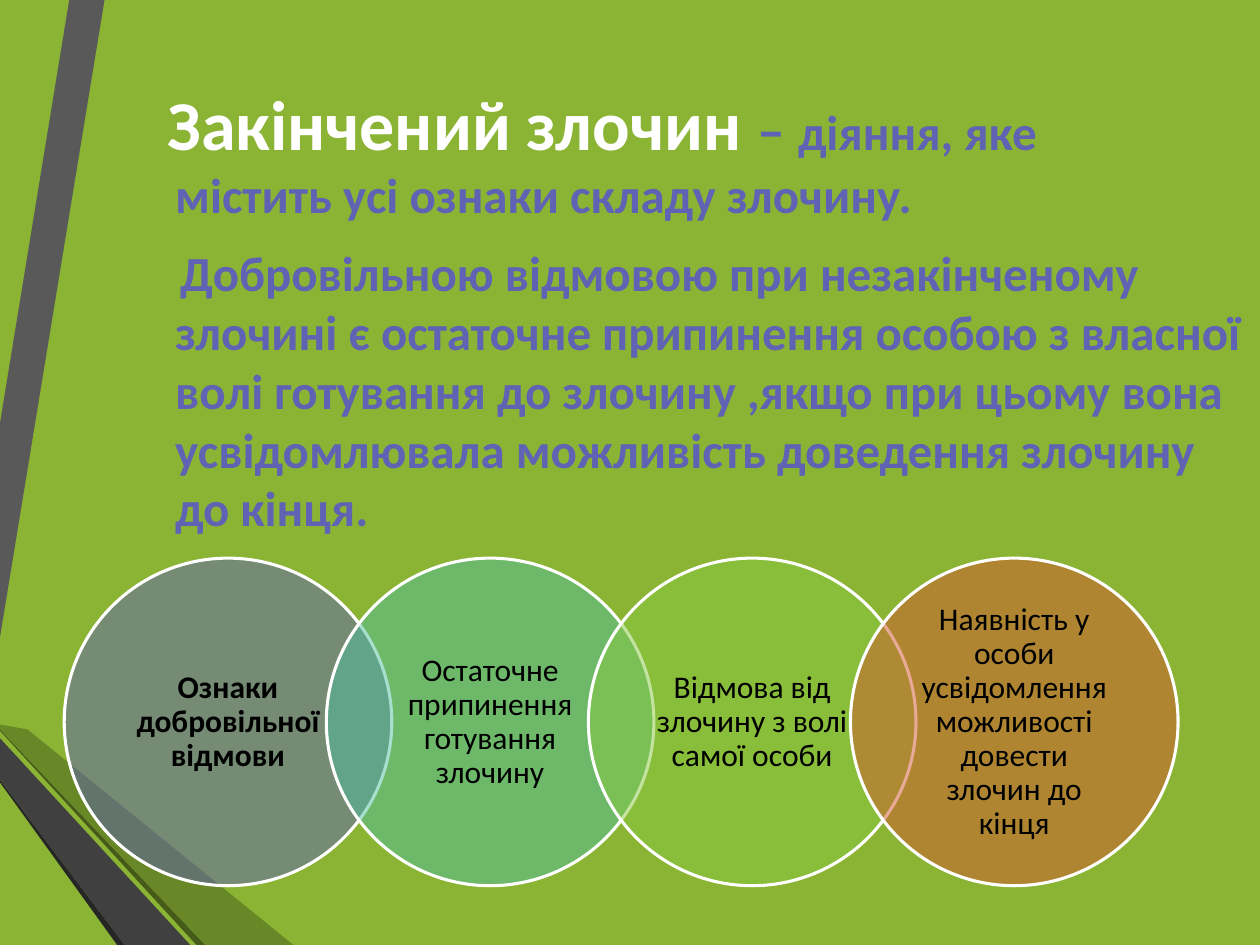
from lxml.etree import SubElement
from pptx import Presentation
from pptx.dml.color import RGBColor
from pptx.enum.shapes import MSO_SHAPE
from pptx.enum.text import MSO_ANCHOR, MSO_AUTO_SIZE, PP_ALIGN
from pptx.oxml.ns import qn
from pptx.util import Inches, Pt

COLORS = {
    "background": "8BB434", "white": "FFFFFF", "black": "000000",
    "violet": "6063B4", "teal": "51BE9F", "green": "88C841", "rust": "D35731",
    "band": "595959", "edge": "262626", "blade": "404040",
    "dark_leaf": "465A1A", "leaf": "688727",
}

DECORATION = [
    ("band", [(0.83, 0), (0.55, 0), (0, 3.36), (0, 5.06)]),
    ("edge", [(0, 6.19), (0, 6.21), (0.93, 7.5), (0.99, 7.5)]),
    ("dark_leaf", [(0, 5.79), (0, 5.8), (1.56, 7.5), (1.63, 7.5)]),
    ("leaf", [(0, 5.79), (1.63, 7.5), (2.33, 7.5), (0.22, 5.79), (0, 5.75)]),
    ("blade", [(0, 6.19), (0.99, 7.5), (1.51, 7.5), (0, 5.86)]),
]

# Each paragraph: first-line indent in inches, then runs of (text, size, colour)
DEFINITIONS = [
    (-0.06, [("Закінчений злочин ", 40, "white"), ("– ", 32, "violet"),
             ("діяння, яке\vмістить усі ознаки складу злочину.", 28, "violet")]),
    (0.04, [("Добровільною відмовою при незакінченому злочині є остаточне "
             "припинення особою з власної волі готування до злочину ,якщо при "
             "цьому вона усвідомлювала можливість доведення злочину до кінця.",
             28, "violet")]),
]

SIGNS = [
    ("Ознаки добровільної відмови", "violet", True),
    ("Остаточне припинення готування злочину", "teal", False),
    ("Відмова від злочину з волі самої особи", "green", False),
    ("Наявність у особи усвідомлення можливості довести злочин до кінця",
     "rust", False),
]
CIRCLE_LEFT, CIRCLE_TOP, CIRCLE_SIZE, CIRCLE_STEP = 0.51, 4.43, 2.6, 2.08


class SlideBuilder:
    font_name = "Calibri"

    def __init__(self, page):
        self.page = page
        self.paint(page.background.fill, "background")

    def paint(self, fill, color):
        fill.solid()
        fill.fore_color.rgb = RGBColor.from_string(COLORS[color])

    def style(self, font, size, color, bold):
        font.name, font.size, font.bold = self.font_name, Pt(size), bold
        font.color.rgb = RGBColor.from_string(COLORS[color])

    def polygon(self, color, points):
        start, *rest = [(Inches(x), Inches(y)) for x, y in points]
        builder = self.page.shapes.build_freeform(*start)
        builder.add_line_segments(rest, close=True)
        shape = builder.convert_to_shape()
        shape.shadow.inherit = False
        self.paint(shape.fill, color)
        shape.line.fill.background()

    def body(self, box, left, top, width, height, paragraphs):
        box.left, box.top = Inches(left), Inches(top)
        box.width, box.height = Inches(width), Inches(height)
        frame = box.text_frame
        frame.word_wrap = True
        frame.auto_size = MSO_AUTO_SIZE.NONE
        frame.vertical_anchor = MSO_ANCHOR.MIDDLE
        for index, (indent, spans) in enumerate(paragraphs):
            para = frame.add_paragraph() if index else frame.paragraphs[0]
            properties = para._p.get_or_add_pPr()
            properties.set("marL", str(Inches(0.31)))
            properties.set("indent", str(Inches(indent)))
            para.space_before = Pt(5 if index else 0)
            para.space_after = Pt(6)
            SubElement(properties, qn("a:buNone"))
            self.style(para.font, 28, "violet", True)
            for text, size, color in spans:
                for part, line in enumerate(text.split("\v")):
                    if part:
                        para.add_line_break()
                    span = para.add_run()
                    span.text = line
                    self.style(span.font, size, color, True)

    def circle(self, left, top, size, text, color, bold):
        """Draw a half-transparent circle with centred text."""
        shape = self.page.shapes.add_shape(
            MSO_SHAPE.OVAL, Inches(left), Inches(top), Inches(size), Inches(size))
        shape.shadow.inherit = False
        self.paint(shape.fill, color)
        tint = shape._element.spPr.find(qn("a:solidFill"))[0]
        SubElement(tint, qn("a:alpha"), val="50000")
        self.paint(shape.line.fill, "white")
        shape.line.width = Pt(1.75)
        frame = shape.text_frame
        frame.word_wrap = True
        frame.vertical_anchor = MSO_ANCHOR.MIDDLE
        frame.margin_left = frame.margin_right = Inches(0.14)
        frame.margin_top = frame.margin_bottom = Inches(0.03)
        para = frame.paragraphs[0]
        para.text = text
        para.alignment = PP_ALIGN.CENTER
        para.line_spacing = 0.9
        self.style(para.font, 18, "black", bold)


def main():
    deck = Presentation()
    deck.slide_width, deck.slide_height = Inches(10), Inches(7.5)
    page = deck.slides.add_slide(deck.slide_layouts[1])
    title, body = page.placeholders
    tree = title._element.getparent()
    tree.remove(title._element)

    builder = SlideBuilder(page)
    for color, points in DECORATION:
        builder.polygon(color, points)
    tree.append(body._element)  # bring the text in front of the decoration
    builder.body(body, 0.98, -0.82, 9, 6.54, DEFINITIONS)
    for index, sign in enumerate(SIGNS):
        builder.circle(CIRCLE_LEFT + index * CIRCLE_STEP, CIRCLE_TOP,
                       CIRCLE_SIZE, *sign)
    deck.save("out.pptx")


if __name__ == "__main__":
    main()
